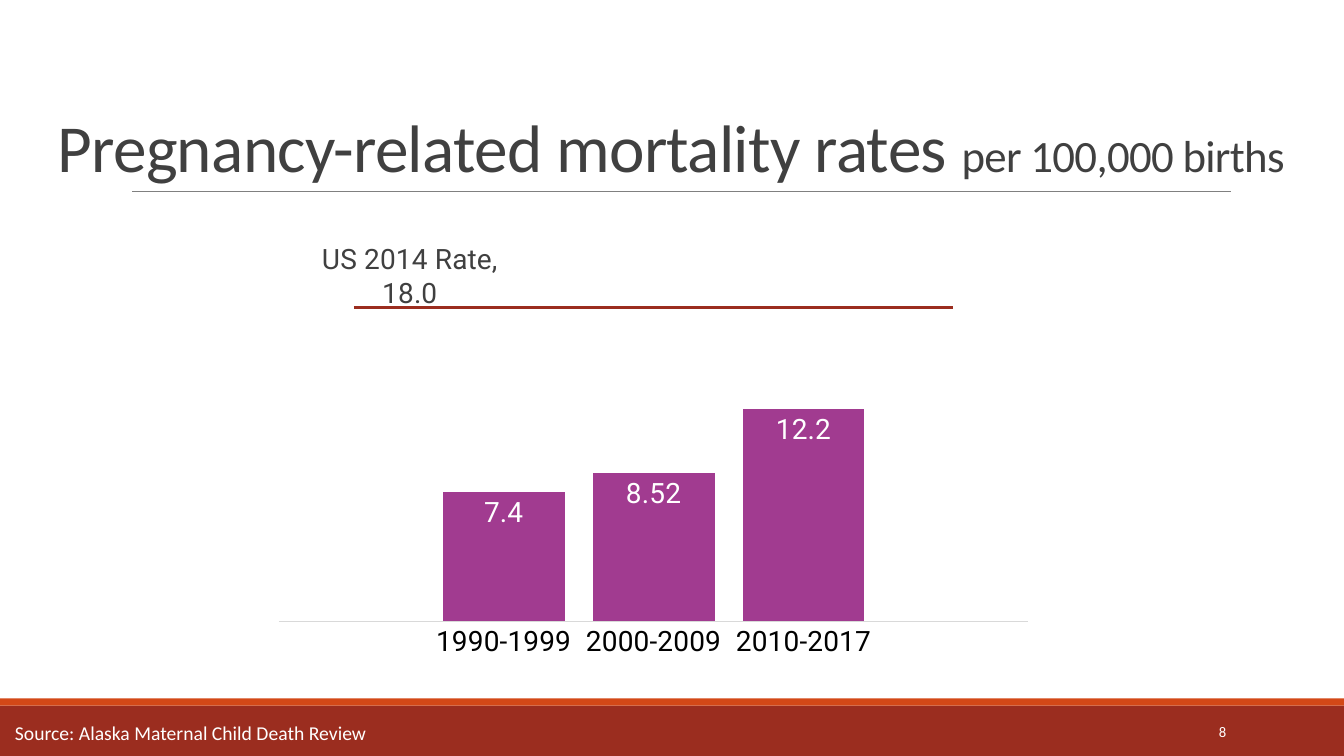
import lxml.etree
import pptx
import pptx.chart.data
import pptx.dml.color
import pptx.enum.chart
import pptx.enum.shapes
import pptx.enum.text
import pptx.oxml.ns
import pptx.util

Inches = pptx.util.Inches
Pt = pptx.util.Pt
qn = pptx.oxml.ns.qn
COLORS = {
    "footer": "9B2D1F", "stripe": "D34817", "rule": "808080", "axis": "D9D9D9",
    "bars": "A13B90", "text": "404040", "black": "000000", "white": "FFFFFF",
}
RGB = {name: pptx.dml.color.RGBColor.from_string(value) for name, value in COLORS.items()}


def style_font(font, color, **values):
    for name, value in values.items():
        setattr(font, name, value)
    font.color.rgb = RGB[color]


def manual_layout(parent, index, **values):
    for old in parent.findall(qn("c:layout")):
        parent.remove(old)
    layout = lxml.etree.Element(qn("c:layout"))
    manual = lxml.etree.SubElement(layout, qn("c:manualLayout"))
    for name, value in values.items():
        lxml.etree.SubElement(manual, qn(f"c:{name}")).set("val", str(value))
    parent.insert(index, layout)


deck = pptx.Presentation()
deck.slide_width, deck.slide_height = Inches(13.33), Inches(7.5)
slide = deck.slides.add_slide(deck.slide_layouts[5])

# Footer bands
for color, top, height in (("footer", 7, 0.5), ("stripe", 6.93, 0.07)):
    band = slide.shapes.add_shape(
        pptx.enum.shapes.MSO_SHAPE.RECTANGLE, 0, Inches(top), Inches(13.33), Inches(height))
    band.shadow.inherit = False
    band.fill.solid()
    band.fill.fore_color.rgb = RGB[color]
    band.line.fill.background()

# Rule under the title
rule = slide.shapes.add_connector(
    pptx.enum.shapes.MSO_CONNECTOR.STRAIGHT,
    Inches(1.31), Inches(1.9), Inches(12.21), Inches(1.9))
rule.line.color.rgb = RGB["rule"]
rule.line.width = Pt(0.5)
lxml.etree.SubElement(rule._element.spPr, qn("a:effectLst"))

# Title
heading = slide.shapes.title
for name, value in {"left": 0.47, "top": 0.31, "width": 12.58, "height": 1.59}.items():
    setattr(heading, name, Inches(value))
frame_format = {
    "word_wrap": True,
    "auto_size": pptx.enum.text.MSO_AUTO_SIZE.NONE,
    "vertical_anchor": pptx.enum.text.MSO_ANCHOR.BOTTOM,
}
for name, value in frame_format.items():
    setattr(heading.text_frame, name, value)
heading_line = heading.text_frame.paragraphs[0]
heading_line.alignment = pptx.enum.text.PP_ALIGN.LEFT
heading_line.line_spacing = 0.85
for words, size in (("Pregnancy-related mortality rates ", 48), ("per 100,000 births", 32)):
    run = heading_line.add_run()
    run.text = words
    style_font(run.font, "text", name="Calibri", size=Pt(size))
    run.font._element.set("spc", "-50")

# Mortality chart: columns first, then the US rate moved to a line plot
rates = pptx.chart.data.CategoryChartData()
rates.categories = ["", "1990-1999", "2000-2009", "2010-2017", ""]
rates.add_series("Series 1", [None, 7.4, 8.52, 12.2, None])
rates.add_series("US 2014 Rate", [18] * 5)
chart = slide.shapes.add_chart(
    pptx.enum.chart.XL_CHART_TYPE.COLUMN_CLUSTERED,
    Inches(1.7), Inches(0.8), Inches(9.27), Inches(7.07), rates).chart
chart.has_legend = chart.has_title = False
chart_font = {"name": "Roboto", "size": Pt(20)}
style_font(chart.font, "black", **chart_font)

columns = chart.plots[0]
for name, value in {"gap_width": 23, "overlap": -27, "vary_by_categories": False}.items():
    setattr(columns, name, value)
alaska = columns.series[0]
alaska.format.fill.solid()
alaska.format.fill.fore_color.rgb = RGB["bars"]
alaska.data_labels.show_value = True
alaska.data_labels.position = pptx.enum.chart.XL_LABEL_POSITION.INSIDE_END
style_font(alaska.data_labels.font, "white", **chart_font)

bar_xml = columns._element
us_xml = columns.series[1]._element
for bar_only in us_xml.findall(qn("c:invertIfNegative")):
    us_xml.remove(bar_only)
line_xml = bar_xml.makeelement(qn("c:lineChart"))
bar_xml.addnext(line_xml)
lxml.etree.SubElement(line_xml, qn("c:grouping")).set("val", "standard")
lxml.etree.SubElement(line_xml, qn("c:varyColors")).set("val", "0")
line_xml.append(us_xml)
lxml.etree.SubElement(line_xml, qn("c:marker")).set("val", "1")
for axis_id in bar_xml.findall(qn("c:axId")):
    lxml.etree.SubElement(line_xml, qn("c:axId")).set("val", axis_id.get("val"))

us_rate = chart.plots[1].series[0]
us_rate.smooth = False
us_rate.marker.style = pptx.enum.chart.XL_MARKER_STYLE.NONE
us_rate.format.line.color.rgb = RGB["footer"]
us_rate.format.line.width = Pt(2.25)
us_rate.data_labels.show_value = False
us_label = us_rate.points[0].data_label
us_label.position = pptx.enum.chart.XL_LABEL_POSITION.ABOVE
us_words = us_label.text_frame.paragraphs[0].add_run()
us_words.text = "US 2014 Rate, 18.0"
style_font(us_words.font, "text", **chart_font)
for label_xml in us_rate._element.iter(qn("c:dLbl")):
    manual_layout(label_xml, 1, x=0.06, y=0.01)

# Axes and plot area
periods, scale = chart.category_axis, chart.value_axis
periods.major_tick_mark = pptx.enum.chart.XL_TICK_MARK.NONE
periods.format.line.color.rgb = RGB["axis"]
periods.format.line.width = Pt(0.75)
style_font(periods.tick_labels.font, "black", **chart_font)
scale_format = {
    "minimum_scale": 0, "maximum_scale": 20, "has_major_gridlines": False, "visible": False}
for name, value in scale_format.items():
    setattr(scale, name, value)
manual_layout(bar_xml.getparent(), 0, layoutTarget="inner", xMode="edge", yMode="edge",
              x=0.115, y=0.27, w=0.802, h=0.489)

# Footer: slide number and source
footers = (
    ("8", (10.83, 7.06, 1.43, 0.4), 10.5, pptx.enum.text.PP_ALIGN.RIGHT, True),
    ("Source: Alaska Maternal Child Death Review", (0.05, 7.1, 3.72, 0.34), 14,
     pptx.enum.text.PP_ALIGN.LEFT, False),
)
for words, place, size, alignment, wrap in footers:
    footer = slide.shapes.add_textbox(*map(Inches, place)).text_frame
    footer.word_wrap = wrap
    footer.vertical_anchor = pptx.enum.text.MSO_ANCHOR.MIDDLE
    footer.text = words
    footer.paragraphs[0].alignment = alignment
    style_font(footer.paragraphs[0].runs[0].font, "white", name="Calibri", size=Pt(size))

deck.save("out.pptx")
